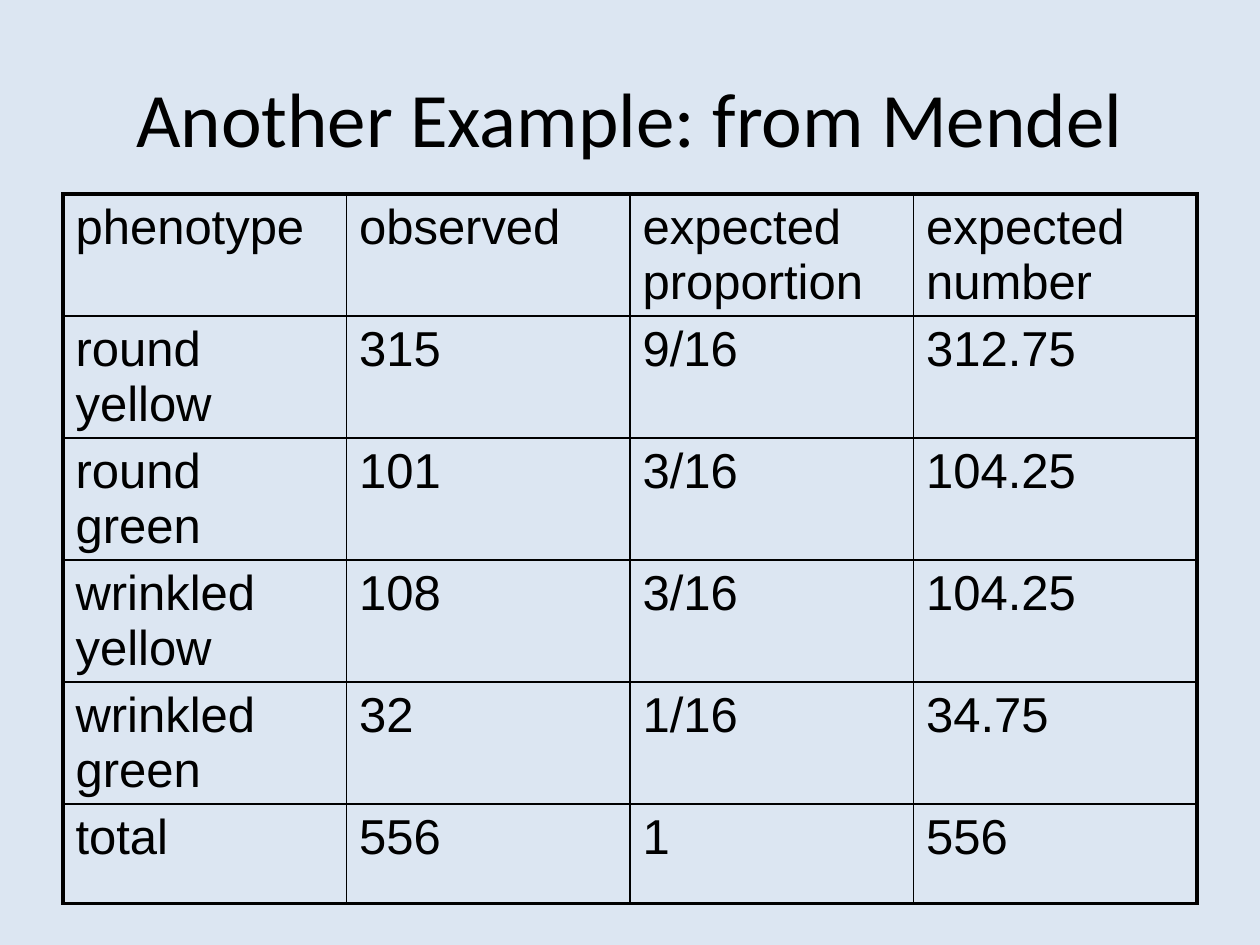
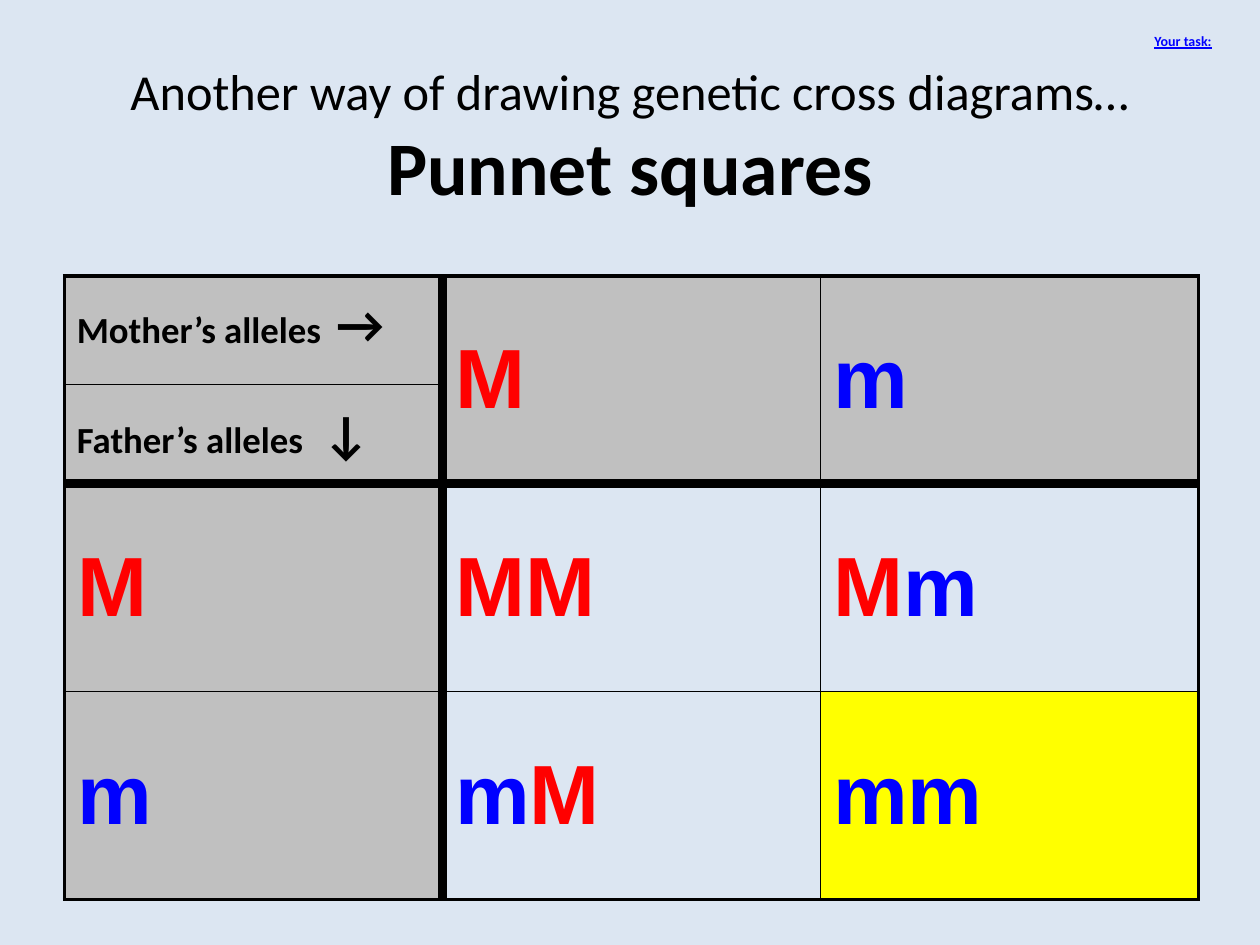
from lxml import etree
from pptx import Presentation
from pptx import util as u
from pptx.dml.color import RGBColor
from pptx.enum import shapes, text
from pptx.oxml import ns

# Shared style
PAPER, BLACK, GREY, YELLOW = "DCE6F2", "000000", "C0C0C0", "FFFF00"
RED, BLUE = "FF0000", "0000FF"
BODY, HEADING = "Arial", "Calibri"
THIN, FRAME, HEAVY = 1, 2.25, 6

# Mendel's counts
MENDEL_TITLE = [("Another Example: from Mendel", 44, False)]
MENDEL_ROWS = [
    ("phenotype", "observed", "expected proportion", "expected number"),
    ("round yellow", "315", "9/16", "312.75"),
    ("round green", "101", "3/16", "104.25"),
    ("wrinkled yellow", "108", "3/16", "104.25"),
    ("wrinkled green", "32", "1/16", "34.75"),
    ("total", "556", "1", "556"),
]

# Punnet square
PUNNET_TITLE = [("Another way of drawing genetic cross diagrams…", 28.8, False),
                ("Punnet squares", 43.2, True)]
PUNNET_ROWS = [("", "M", "m"), ("M", "MM", "Mm"), ("m", "mM", "mm")]
ALLELE_COLORS = {"M": RED, "m": BLUE}
# label, arrow, top and tab position in cm
PARENTS = [("Mother’s alleles", "→", 5.74, 5.23),
           ("Father’s alleles", "↓", 7.95, 4.95)]
TASK = "Your task:"


def color(value):
    return RGBColor.from_string(value)


def add_span(para, words, size, font, hue=BLACK, bold=False):
    span = para.add_run()
    span.text = words
    span.font.size = u.Pt(size)
    span.font.name = font
    span.font.bold = bold
    span.font.color.rgb = color(hue)
    return span


def add_page(deck, lines, top):
    page = deck.slides.add_slide(deck.slide_layouts[5])
    title = page.shapes.title
    title.left, title.top = u.Cm(1.27), u.Cm(top)
    title.width, title.height = u.Cm(22.86), u.Cm(3.18)
    frame = title.text_frame
    frame.auto_size = text.MSO_AUTO_SIZE.NONE
    frame.vertical_anchor = text.MSO_ANCHOR.MIDDLE
    para = frame.paragraphs[0]
    para.alignment = text.PP_ALIGN.CENTER
    for index, (words, size, bold) in enumerate(lines):
        if index:
            para.add_line_break()
        add_span(para, words, size, HEADING, bold=bold)
    return page


def add_label(page, left, top, width, height):
    box = page.shapes.add_textbox(u.Cm(left), u.Cm(top), u.Cm(width), u.Cm(height))
    box.text_frame.word_wrap = True
    return box.text_frame.paragraphs[0]


def set_borders(cell, widths):
    properties = cell._tc.get_or_add_tcPr()
    for index, (side, width) in enumerate(zip("LRTB", widths)):
        line = etree.Element(ns.qn(f"a:ln{side}"), w=str(u.Pt(width)))
        fill = etree.SubElement(line, ns.qn("a:solidFill"))
        etree.SubElement(fill, ns.qn("a:srgbClr"), val=BLACK)
        properties.insert(index, line)


def add_grid(page, left, top, heights, columns, across, down):
    """Yield each cell; across and down list the widths of the ruled lines."""
    width = 22.86
    frame = page.shapes.add_table(len(heights), columns, u.Cm(left), u.Cm(top),
                                  u.Cm(width), u.Cm(sum(heights)))
    table = frame.table
    table.first_row = table.horz_banding = False
    for column in table.columns:
        column.width = u.Cm(width / columns)
    for r, height in enumerate(heights):
        table.rows[r].height = u.Cm(height)
        for c in range(columns):
            cell = table.cell(r, c)
            cell.fill.background()
            set_borders(cell, (across[c], across[c + 1], down[r], down[r + 1]))
            yield r, c, cell


def build_mendel(deck):
    page = add_page(deck, MENDEL_TITLE, 0.76)
    heights = [2.46] * 5 + [2]
    across = [FRAME] + [THIN] * 3 + [FRAME]
    down = [FRAME] + [THIN] * 5 + [FRAME]
    for r, c, cell in add_grid(page, 1.27, 3.91, heights, 4, across, down):
        add_span(cell.text_frame.paragraphs[0], MENDEL_ROWS[r][c], 28, BODY)


def build_punnet(deck):
    page = add_page(deck, PUNNET_TITLE, 1.14)

    # Alleles: grey headers, yellow for the double recessive
    rules = [FRAME, HEAVY, THIN, FRAME]
    for r, c, cell in add_grid(page, 1.3, 5.56, [4.19] * 3, 3, rules, rules):
        alleles = PUNNET_ROWS[r][c]
        if r == 0 or c == 0 or alleles == "mm":
            cell.fill.solid()
            cell.fill.fore_color.rgb = color(YELLOW if alleles == "mm" else GREY)
        cell.vertical_anchor = text.MSO_ANCHOR.MIDDLE
        for allele in alleles:
            add_span(cell.text_frame.paragraphs[0], allele, 48, BODY,
                     ALLELE_COLORS[allele], True)

    # Parent labels in the corner cell
    for words, arrow, top, tab in PARENTS:
        para = add_label(page, 1.3, top, 7.6, 1.52)
        stops = etree.SubElement(para._p.get_or_add_pPr(), ns.qn("a:tabLst"))
        etree.SubElement(stops, ns.qn("a:tab"), pos=str(u.Cm(tab)), algn="l")
        add_span(para, words + "\t", 21, HEADING, bold=True)
        add_span(para, arrow, 30, HEADING, bold=True)

    divider = page.shapes.add_connector(shapes.MSO_CONNECTOR.STRAIGHT, u.Cm(1.3),
                                        u.Cm(7.75), u.Cm(8.89), u.Cm(7.75))
    divider.line.color.rgb = color(BLACK)
    divider.line.width = u.Pt(0.75)
    etree.SubElement(divider._element.spPr, ns.qn("a:effectLst"))

    # Task label
    para = add_label(page, 22.3, 0.53, 3.1, 0.61)
    para.alignment = text.PP_ALIGN.CENTER
    add_span(para, TASK, 8, HEADING, BLUE, True).font.underline = True


def main():
    deck = Presentation()
    deck.slide_width, deck.slide_height = u.Cm(25.4), u.Cm(19.05)
    backdrop = deck.slide_master.background.fill
    backdrop.solid()
    backdrop.fore_color.rgb = color(PAPER)
    build_mendel(deck)
    build_punnet(deck)
    deck.save("out.pptx")


if __name__ == "__main__":
    main()
